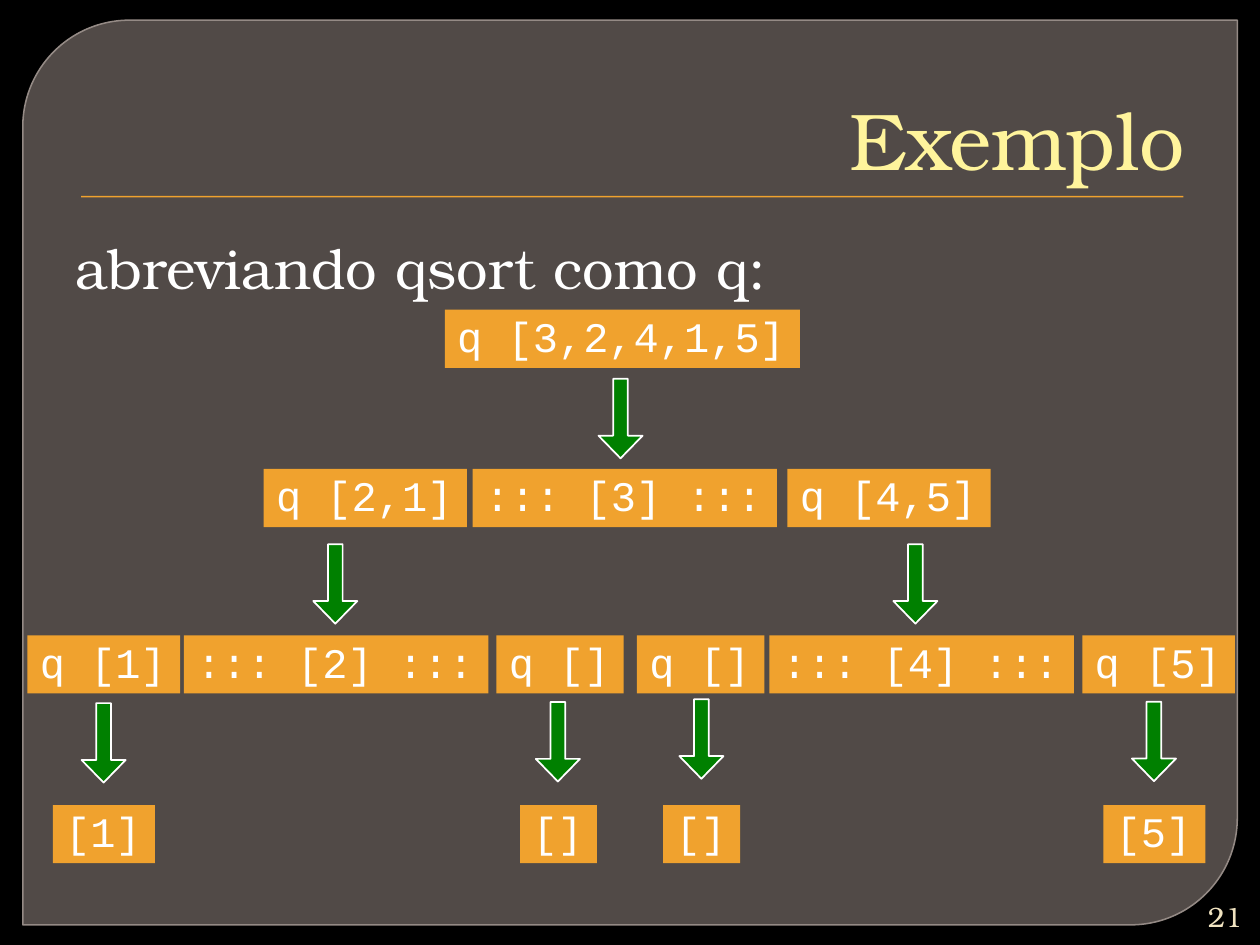
from lxml.etree import SubElement
from pptx import Presentation
from pptx.dml.color import RGBColor
from pptx.enum.shapes import MSO_SHAPE
from pptx.enum.text import MSO_ANCHOR, MSO_AUTO_SIZE, PP_ALIGN
from pptx.oxml.ns import qn
from pptx.util import Pt

BLACK = RGBColor(0x00, 0x00, 0x00)
WHITE = RGBColor(0xFF, 0xFF, 0xFF)
BROWN = RGBColor(0x7D, 0x72, 0x6E)
GREY = RGBColor(0x94, 0x8A, 0x85)
ORANGE = RGBColor(0xF0, 0xA2, 0x2E)
YELLOW = RGBColor(0xFF, 0xF4, 0x9C)
CREAM = RGBColor(0xF0, 0xE3, 0xC0)
GREEN = RGBColor(0x00, 0x80, 0x00)
SERIF = "TeX Gyre Bonum"
MONO = "Courier New"

deck = Presentation()
deck.slide_width, deck.slide_height = Pt(720), Pt(540)
slide = deck.slides.add_slide(deck.slide_layouts[5])
slide.background.fill.solid()
slide.background.fill.fore_color.rgb = BLACK
shapes = slide.shapes


def paint(kind, left, top, width, height, color):
    shape = shapes.add_shape(kind, Pt(left), Pt(top), Pt(width), Pt(height))
    shape.shadow.inherit = False
    shape.fill.solid()
    shape.fill.fore_color.rgb = color
    shape.line.fill.background()
    return shape


def write(frame, text, size, face, color, align=PP_ALIGN.LEFT):
    frame.text = text
    line = frame.paragraphs[0]
    line.alignment = align
    line.font.size = Pt(size)
    line.font.name = face
    line.font.color.rgb = color
    return line


panel = paint(MSO_SHAPE.ROUND_2_DIAG_RECTANGLE, 13, 11.5, 694, 517, BROWN)
panel.adjustments[0] = 0.118
panel.adjustments[1] = 0
panel.line.color.rgb = GREY
panel.line.width = Pt(0.87)
tint = panel.fill._xPr.find(qn("a:solidFill"))[0]
SubElement(tint, qn("a:alpha"), val="65000")
rule = paint(MSO_SHAPE.RECTANGLE, 46.3, 112, 630, 0.8, ORANGE)
for place, shape in enumerate((panel, rule), 2):
    shapes._spTree.insert(place, shape._element)

title = shapes.title
title.left, title.top, title.width, title.height = Pt(36), Pt(20), Pt(648), Pt(90)
title.text_frame.vertical_anchor = MSO_ANCHOR.BOTTOM
write(title.text_frame, "Exemplo", 46, SERIF, YELLOW, PP_ALIGN.RIGHT)

body = shapes.add_textbox(Pt(36), Pt(129.6), Pt(648), Pt(356.4)).text_frame
body.word_wrap = True
body.text = "abreviando qsort como q:"
props = body.paragraphs[0]._p.get_or_add_pPr()
props.set("marL", str(Pt(23)))
props.set("indent", str(Pt(-23)))
SubElement(SubElement(props, qn("a:buClr")), qn("a:srgbClr"), val=str(ORANGE))
SubElement(props, qn("a:buSzPct"), val="70000")
SubElement(props, qn("a:buFont"), typeface="Arial")
SubElement(props, qn("a:buChar"), char="•")
write(body, body.text, 32, SERIF, WHITE)

page = shapes.add_textbox(Pt(680.4), Pt(512.6), Pt(36.7), Pt(21.6)).text_frame
page.vertical_anchor = MSO_ANCHOR.MIDDLE
page.margin_left = page.margin_right = Pt(7.2)
page.word_wrap = False
write(page, "21", 16, SERIF, CREAM, PP_ALIGN.RIGHT)

ROWS = [
    (177, [(254.2, "q [3,2,4,1,5]")]),
    (268, [(150.7, "q [2,1]"), (270, "::: [3] :::"), (450, "q [4,5]")]),
    (363, [(15.7, "q [1]"), (105.1, "::: [2] :::"), (283.7, "q []"),
           (364, "q []"), (439.7, "::: [4] :::"), (618.5, "q [5]")]),
    (460, [(30.2, "[1]"), (297.2, "[]"), (379, "[]"), (630.5, "[5]")]),
]
for top, cells in ROWS:
    for left, text in cells:
        width = 15 + 14.45 * len(text)
        box = shapes.add_textbox(Pt(left), Pt(top), Pt(width), Pt(33.3))
        box.fill.solid()
        box.fill.fore_color.rgb = ORANGE
        frame = box.text_frame
        frame.word_wrap = False
        frame.auto_size = MSO_AUTO_SIZE.SHAPE_TO_FIT_TEXT
        frame.vertical_anchor = MSO_ANCHOR.MIDDLE
        write(frame, text, 24, MONO, WHITE).line_spacing = 0.9

ARROWS = [(342, 216.5), (179, 311), (510.5, 311), (46.6, 401.8),
          (306.2, 401.2), (388.2, 399.6), (646.8, 401)]
for left, top in ARROWS:
    arrow = paint(MSO_SHAPE.DOWN_ARROW, left, top, 25.2, 45.4, GREEN)
    arrow.adjustments[0] = 0.333
    arrow.adjustments[1] = 0.512
    arrow.line.color.rgb = WHITE
    arrow.line.width = Pt(1)

deck.save("out.pptx")
